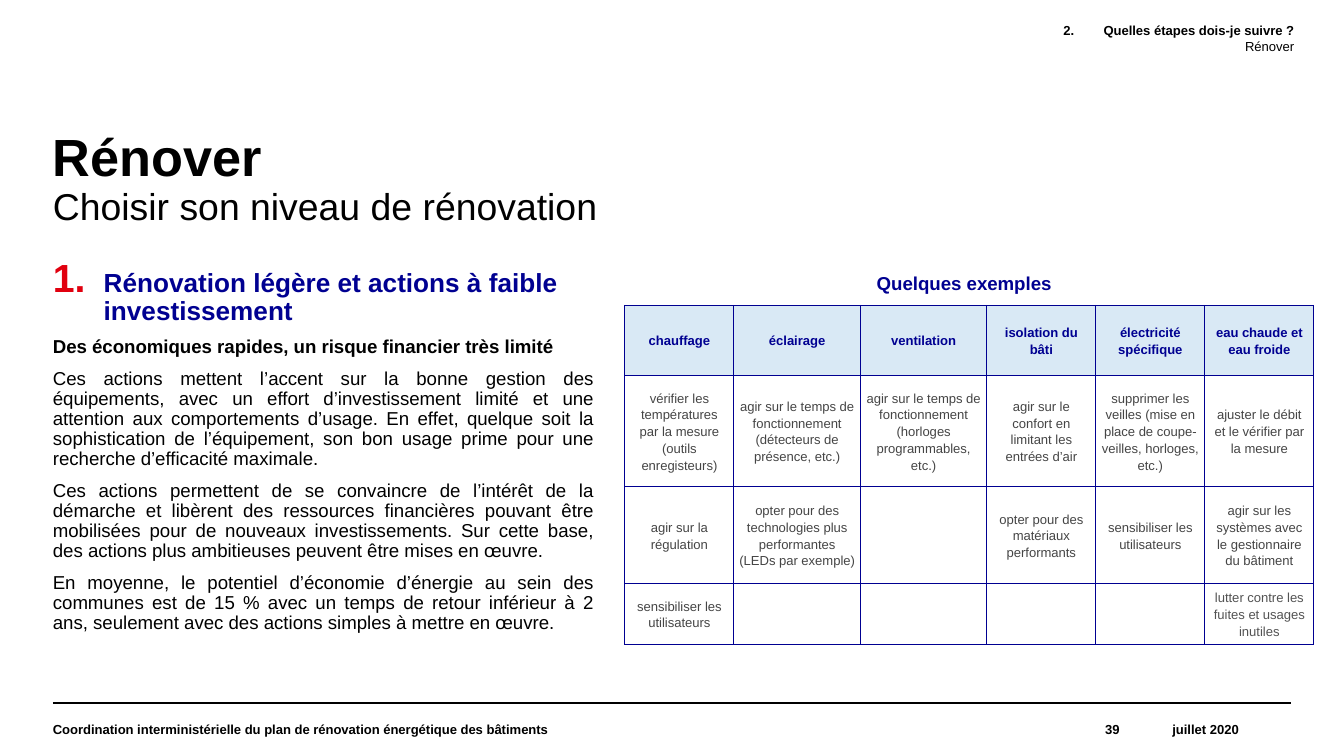
from lxml import etree
from pptx import Presentation
from pptx.dml.color import RGBColor
from pptx.enum.shapes import MSO_CONNECTOR
from pptx.enum.text import MSO_ANCHOR, MSO_AUTO_SIZE, PP_ALIGN
from pptx.oxml.ns import qn
from pptx.util import Cm, Pt

LEFT, MID, RIGHT, FULL = PP_ALIGN.LEFT, PP_ALIGN.CENTER, PP_ALIGN.RIGHT, PP_ALIGN.JUSTIFY
TOP, CENTRE = MSO_ANCHOR.TOP, MSO_ANCHOR.MIDDLE
FIXED = MSO_AUTO_SIZE.NONE
LINE = MSO_CONNECTOR.STRAIGHT

FONT = "Arial"
HUE = {"black": "000000", "navy": "000091", "red": "E1000F",
       "sky": "0070C0", "grey": "454545", "pale": "535353"}

TITLE = ("Rénover", "Choisir son niveau de rénovation")
TRAIL = ("Quelles étapes dois-je suivre ?", "Rénover")
HEAD = "Rénovation légère et actions à faible investissement"
LEAD = "Des économiques rapides, un risque financier très limité"
BODY = [
    "Ces actions mettent l’accent sur la bonne gestion des équipements, avec un effort "
    "d’investissement limité et une attention aux comportements d’usage. En effet, quelque "
    "soit la sophistication de l’équipement, son bon usage prime pour une recherche "
    "d’efficacité maximale.",
    "Ces actions permettent de se convaincre de l’intérêt de la démarche et libèrent des "
    "ressources financières pouvant être mobilisées pour de nouveaux investissements. Sur "
    "cette base, des actions plus ambitieuses peuvent être mises en œuvre.",
    "En moyenne, le potentiel d’économie d’énergie au sein des communes est de 15 % avec un "
    "temps de retour inférieur à 2 ans, seulement avec des actions simples à mettre en œuvre.",
]
LABEL = "Quelques exemples"
ROWS = [
    ("chauffage", "éclairage", "ventilation", "isolation du bâti",
     "électricité spécifique", "eau chaude et eau froide"),
    ("vérifier les températures par la mesure (outils enregisteurs)",
     "agir sur le temps de fonctionnement (détecteurs de présence, etc.)",
     "agir sur le temps de fonctionnement (horloges programmables, etc.)",
     "agir sur le confort en limitant les entrées d’air",
     "supprimer les veilles (mise en place de coupe-veilles, horloges, etc.)",
     "ajuster le débit et le vérifier par la mesure"),
    ("agir sur la régulation",
     "opter pour des technologies plus performantes (LEDs par exemple)",
     "",
     "opter pour des matériaux performants",
     "sensibiliser les utilisateurs",
     "agir sur les systèmes avec le gestionnaire du bâtiment"),
    ("sensibiliser les utilisateurs", "", "", "", "",
     "lutter contre les fuites et usages inutiles"),
]
WIDTHS = (2.06, 2.39, 2.39, 2.06, 2.06, 2.06)
HEIGHTS = (1.32, 2.11, 1.83, 1.15)
FOOT = [
    ("Coordination interministérielle du plan de rénovation énergétique des bâtiments",
     1, 16.41, LEFT),
    ("39", 20.8, 0.36, RIGHT),
    ("juillet 2020", 21.16, 3.25, MID),
]


def write(par, text, size=7, bold=True, hue="black", align=LEFT, line=1.0, before=0):
    par.alignment = align
    par.line_spacing = line
    par.space_before = Pt(before)
    run = par.add_run()
    run.text = text
    font = run.font
    font.name, font.size, font.bold = FONT, Pt(size), bold
    font.color.rgb = RGBColor.from_string(HUE[hue])


def place(shape, left, top, width, height, inset=0, anchor=TOP):
    shape.left, shape.top = Cm(left), Cm(top)
    shape.width, shape.height = Cm(width), Cm(height)
    frame = shape.text_frame
    frame.word_wrap = True
    frame.auto_size = FIXED
    frame.vertical_anchor = anchor
    frame.margin_left = frame.margin_right = Cm(inset)
    frame.margin_top = frame.margin_bottom = Cm(inset)
    return frame


def box(slide, *spot, **form):
    return place(slide.shapes.add_textbox(0, 0, 0, 0), *spot, **form)


def node(root, tag, **attrs):
    item = etree.SubElement(root, qn(tag))
    for key, val in attrs.items():
        item.set(key, str(val))
    return item


def indent(par, left, first):
    props = par._p.get_or_add_pPr()
    props.set("marL", str(Cm(left)))
    props.set("indent", str(Cm(first)))
    return props


def number(par, left, first, hue, start=1, scale=100):
    props = indent(par, left, first)
    node(node(props, "a:buClr"), "a:srgbClr", val=HUE[hue])
    node(props, "a:buSzPct", val=scale * 1000)
    node(props, "a:buFont", typeface=FONT)
    node(props, "a:buAutoNum", type="arabicPeriod", startAt=start)


def edge(cell):
    props = cell._tc.get_or_add_tcPr()
    for pos, side in enumerate(("a:lnL", "a:lnR", "a:lnT", "a:lnB")):
        rule = node(props, side, w=Pt(0.5))
        node(node(rule, "a:solidFill"), "a:srgbClr", val=HUE["navy"])
        props.insert(pos, rule)


def tint(cell, hue, part):
    cell.fill.solid()
    cell.fill.fore_color.rgb = RGBColor.from_string(HUE[hue])
    node(cell._tc.tcPr.find(".//" + qn("a:solidFill") + "/" + qn("a:srgbClr"))
         if cell._tc.tcPr.find(qn("a:solidFill")) is None
         else cell._tc.tcPr.find(qn("a:solidFill"))[0], "a:alpha", val=part * 1000)


def draw_grid(slide):
    grid = slide.shapes.add_table(len(ROWS), len(WIDTHS), Cm(11.81), Cm(5.77),
                                  Cm(sum(WIDTHS)), Cm(sum(HEIGHTS))).table
    grid.first_row = grid.horz_banding = False
    for col, width in zip(grid.columns, WIDTHS):
        col.width = Cm(width)
    for r, (row, height) in enumerate(zip(ROWS, HEIGHTS)):
        grid.rows[r].height = Cm(height)
        for c, text in enumerate(row):
            cell = grid.cell(r, c)
            cell.vertical_anchor = CENTRE
            cell.margin_left = cell.margin_right = Cm(0.1)
            cell.margin_top = cell.margin_bottom = Cm(0.1)
            if r == 0:
                tint(cell, "sky", 15)
            else:
                cell.fill.background()
            edge(cell)
            if text:
                last = r == len(ROWS) - 1 and c == len(row) - 1
                hue = "navy" if r == 0 else "pale" if last else "grey"
                write(cell.text_frame.paragraphs[0], text, bold=r == 0, hue=hue,
                      align=MID, line=1.15)


def main():
    deck = Presentation()
    deck.slide_width, deck.slide_height = Cm(25.4), Cm(14.29)
    slide = deck.slides.add_slide(deck.slide_layouts[5])

    par = place(slide.shapes.title, 1, 2.49, 23.4, 2).paragraphs[0]
    write(par, TITLE[0], size=28, line=0.9)
    par.add_line_break()
    write(par, TITLE[1], size=20, bold=False, line=0.9)

    rule = slide.shapes.add_connector(LINE, Cm(1), Cm(13.29), Cm(24.4), Cm(13.29))
    rule.line.width = Pt(0.8)
    rule.line.color.rgb = RGBColor.from_string(HUE["black"])
    node(rule._element.spPr, "a:effectLst")

    frame = box(slide, 1, 5.1, 10.21, 7.14)
    par = frame.paragraphs[0]
    write(par, HEAD, size=14, hue="navy", line=0.9)
    number(par, 0.96, -0.96, "red", scale=150)
    write(frame.add_paragraph(), LEAD, size=10, line=0.9, before=6)
    for text in BODY:
        write(frame.add_paragraph(), text, size=10, bold=False, align=FULL,
              line=0.9, before=6)

    frame = box(slide, 9.27, 0.43, 15.19, 1)
    par = frame.paragraphs[0]
    write(par, TRAIL[0], align=RIGHT)
    number(par, 10.9, -0.76, "black", start=2)
    par = frame.add_paragraph()
    write(par, TRAIL[1], bold=False, align=RIGHT)
    indent(par, 0, 0.5)

    draw_grid(slide)
    frame = box(slide, 16.1, 4.88, 4.24, 0.89, inset=0.25)
    write(frame.paragraphs[0], LABEL, size=10, hue="navy", align=MID)

    for text, left, width, align in FOOT:
        frame = box(slide, left, 13.61, width, 0.36, anchor=CENTRE)
        write(frame.paragraphs[0], text, align=align)

    deck.save("out.pptx")


if __name__ == "__main__":
    main()
